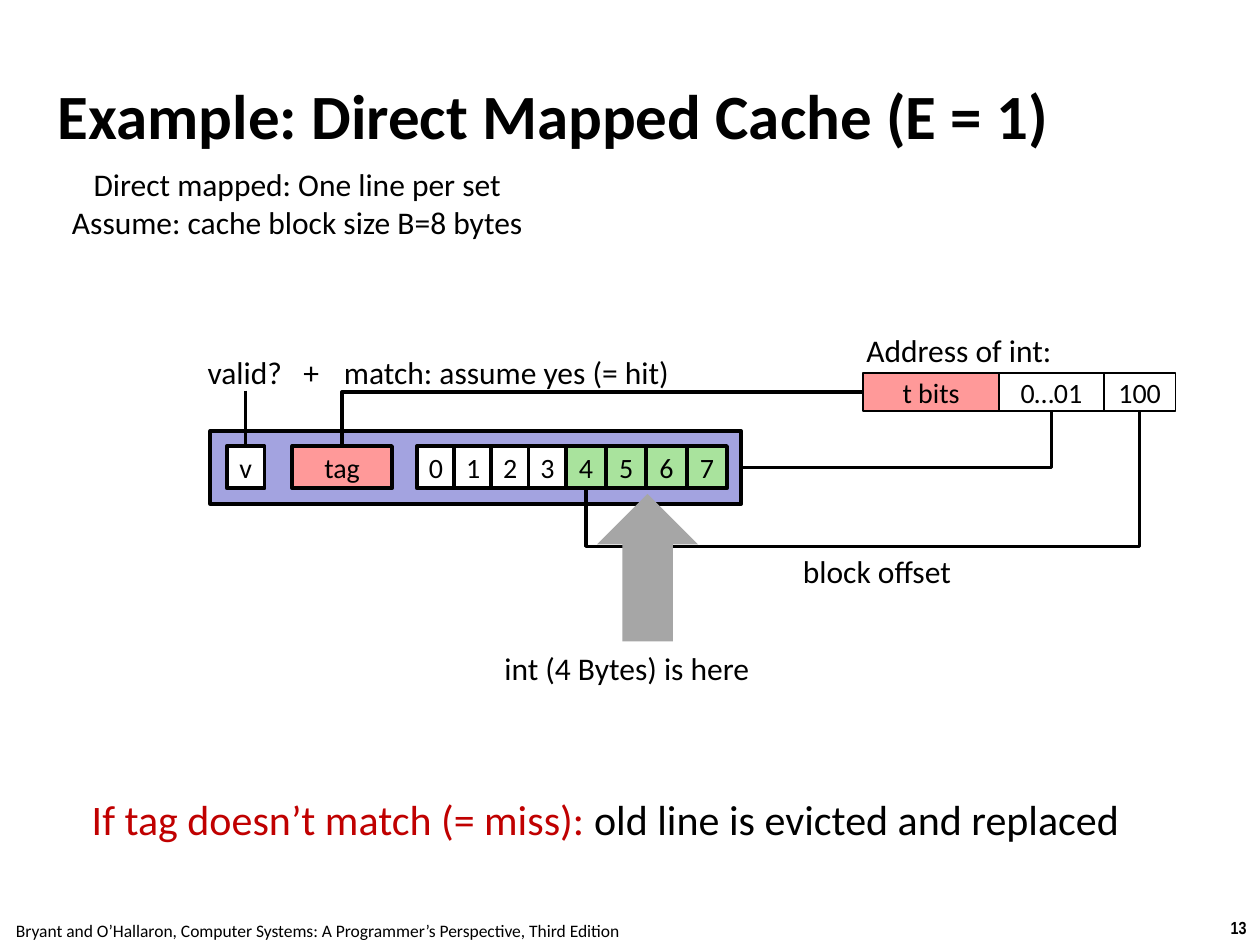
from lxml.etree import SubElement
from pptx import Presentation
from pptx.dml.color import RGBColor
from pptx.enum.shapes import MSO_CONNECTOR as Link, MSO_SHAPE as Shape
from pptx.enum.text import MSO_ANCHOR as Anchor, MSO_AUTO_SIZE as AutoSize, PP_ALIGN as Align
from pptx.oxml.ns import qn
from pptx.util import Inches, Pt

COLORS = {
    "ink": "000000",
    "paper": "FFFFFF",
    "tag": "FF9999",
    "line": "A3A3E0",
    "int": "A9E39D",
    "arrow": "A6A6A6",
    "miss": "C00000",
}
COLUMNS, ROWS = 100, 75  # grid over the 10 x 7.5 inch slide
TOP, LEFT, BOTTOM, RIGHT = range(4)  # connection sites of a rectangle


class SlideBuilder:
    """Holds the style and the current slide; lengths are grid units."""

    font = "Calibri"

    def __init__(self, deck):
        self.slide = deck.slides.add_slide(deck.slide_layouts[5])
        self.column = deck.slide_width / COLUMNS
        self.row = deck.slide_height / ROWS

    def place(self, x, y, width, height):
        return (round(x * self.column), round(y * self.row),
                round(width * self.column), round(height * self.row))

    def color(self, name):
        return RGBColor.from_string(COLORS[name])

    def style(self, paragraph, size, bold=False, align=Align.CENTER, font=None):
        paragraph.alignment = align
        paragraph.font.name = font or self.font
        paragraph.font.size = Pt(size)
        paragraph.font.bold = bold
        paragraph.font.color.rgb = self.color("ink")

    def title(self, text, *box):
        title = self.slide.shapes.title
        title.left, title.top, title.width, title.height = self.place(*box)
        frame = title.text_frame
        frame.text = text
        frame.vertical_anchor = Anchor.MIDDLE
        frame.margin_left = frame.margin_right = Inches(0.04)
        frame.margin_top = frame.margin_bottom = Inches(0.04)
        self.style(frame.paragraphs[0], 36, bold=True, align=Align.LEFT)

    def label(self, text, *box, size=18, **style):
        frame = self.slide.shapes.add_textbox(*self.place(*box)).text_frame
        frame.text = text
        frame.word_wrap = False
        frame.auto_size = AutoSize.SHAPE_TO_FIT_TEXT
        for paragraph in frame.paragraphs:
            self.style(paragraph, size, **style)
        return frame

    def block(self, kind, fill, *box, line=None):
        block = self.slide.shapes.add_shape(kind, *self.place(*box))
        block.shadow.inherit = False
        block.fill.solid()
        block.fill.fore_color.rgb = self.color(fill)
        if line:
            block.line.color.rgb = self.color("ink")
            block.line.width = Pt(line)
        else:
            block.line.fill.background()
        return block

    def cell(self, text, fill, *box, line=2.25):
        cell = self.block(Shape.RECTANGLE, fill, *box, line=line)
        frame = cell.text_frame
        frame.text = text
        frame.word_wrap = False
        frame.vertical_anchor = Anchor.MIDDLE
        self.style(frame.paragraphs[0], 16)
        return cell

    def connector(self, kind):
        wire = self.slide.shapes.add_connector(kind, 0, 0, 0, 0)
        wire.line.color.rgb = self.color("ink")
        wire.line.width = Pt(2)
        SubElement(wire._element.spPr, qn("a:effectLst"))
        return wire

    def drop(self, length, target):
        """Straight line down onto the top of the target."""
        wire = self.connector(Link.STRAIGHT)
        wire.end_connect(target, TOP)
        wire.begin_x = wire.end_x
        wire.begin_y = wire.end_y - round(length * self.row)

    def elbow(self, start, start_site, end, end_site, preset, bend=None):
        """Bent line; one that leaves downwards to the left is a quarter turn."""
        wire = self.connector(Link.ELBOW)
        wire.begin_connect(start, start_site)
        wire.end_connect(end, end_site)
        properties = wire._element.spPr
        geometry = properties.find(qn("a:prstGeom"))
        geometry.set("prst", preset)
        if bend is not None:
            guides = geometry.find(qn("a:avLst"))
            if guides is None:
                guides = SubElement(geometry, qn("a:avLst"))
            SubElement(guides, qn("a:gd"), name="adj1", fmla=f"val {round(bend * 100000)}")
        if start_site == BOTTOM:
            center_x = wire.left + wire.width // 2
            center_y = wire.top + wire.height // 2
            wire.width, wire.height = wire.height, wire.width
            wire.left = center_x - wire.width // 2
            wire.top = center_y - wire.height // 2
            transform = properties.find(qn("a:xfrm"))
            transform.attrib.pop("flipH", None)
            transform.set("rot", str(90 * 60000))


def main():
    deck = Presentation()
    deck.slide_width, deck.slide_height = Inches(10), Inches(7.5)
    page = SlideBuilder(deck)

    # Footer, title and assumptions
    page.label("13", 96.6, 72.3, 3.4, 2.7, size=10, bold=True, font="Arial Narrow")
    page.label("Bryant and O’Hallaron, Computer Systems: A Programmer’s Perspective, Third Edition",
               -0.2, 72.5, 50.8, 2.7, size=10)
    page.title("Example: Direct Mapped Cache (E = 1)", 4.2, 2.8, 91.7, 12.5)
    page.label("Direct mapped: One line per set\nAssume: cache block size B=8 bytes",
               4.2, 12.6, 38.8, 7.1)

    # Address fields, laid side by side
    address = []
    x = 68.5
    for text, fill, width in [("t bits", "tag", 10.8), ("0…01", "paper", 8.3),
                              ("100", "paper", 5.7)]:
        address.append(page.cell(text, fill, x, 29.6, width, 3, line=1))
        x += width
    tag_bits, set_index, block_offset = address
    page.label("Address of int:", 67.5, 25.8, 17.2, 4)

    # Cache line: valid bit, tag and eight bytes, of which 4 to 7 hold the int
    cache_line = page.block(Shape.RECTANGLE, "line", 16.7, 34.2, 42.1, 5.8, line=2.25)
    cell_top, cell_height = 35.4, 3.35
    valid = page.cell("v", "paper", 18, cell_top, 3, cell_height)
    tag = page.cell("tag", "tag", 23.2, cell_top, 7.9, cell_height)
    cells = []
    for byte in range(8):
        holds_int = byte >= 4
        x = 44.9 + (byte - 4) * (3.2 if holds_int else 2.95)
        cells.append(page.cell(str(byte), "int" if holds_int else "paper",
                               x, cell_top, 3.2 if holds_int else 3, cell_height))

    # Lookup paths from the address to the cache line
    page.elbow(set_index, BOTTOM, cache_line, RIGHT, "bentConnector2")
    page.elbow(tag_bits, LEFT, tag, TOP, "bentConnector2")
    page.label("match: assume yes (= hit)", 25.9, 27.5, 28.6, 4)
    page.drop(4.4, valid)
    page.label("valid?   +", 15.3, 27.5, 11.2, 4)
    page.elbow(block_offset, BOTTOM, cells[4], BOTTOM, "bentConnector3", bend=1.75)

    # Place of the int
    page.block(Shape.UP_ARROW, "arrow", 47.4, 39.2, 8, 11.7)
    page.label("int (4 Bytes) is here", 38.7, 51, 22.1, 4)
    page.label("block offset", 62.5, 43.3, 14.2, 4)

    # Miss rule
    miss = page.label("", 5, 62.5, 86.1, 5, size=24).paragraphs[0]
    for text, color in [("If tag doesn’t match (= miss): ", "miss"),
                        ("old line is evicted and replaced", "ink")]:
        run = miss.add_run()
        run.text = text
        run.font.color.rgb = page.color(color)

    deck.save("out.pptx")


if __name__ == "__main__":
    main()
